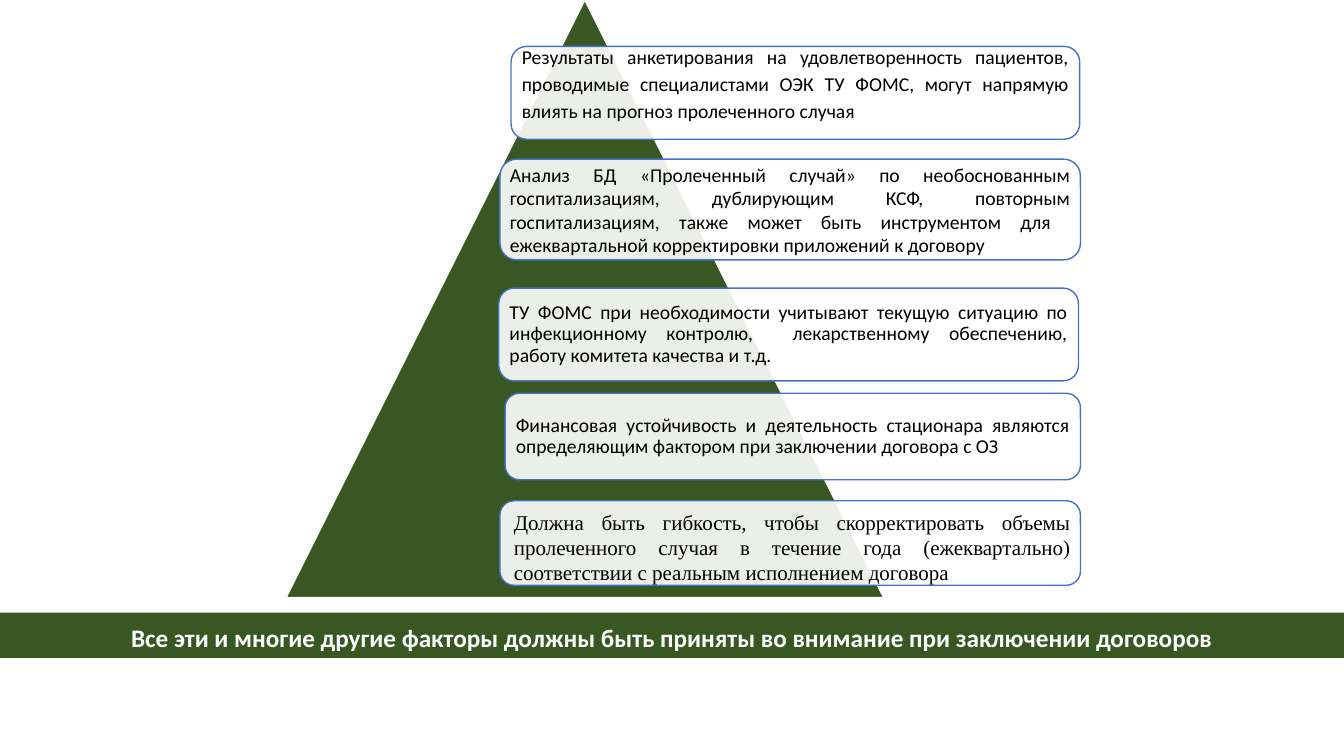
"""Build the slide on factors to weigh when concluding contracts."""
from dataclasses import dataclass
from typing import Optional

import pptx
import pptx.dml.color
import pptx.enum.shapes
import pptx.enum.text
import pptx.oxml
import pptx.oxml.ns
import pptx.util

Cm = pptx.util.Cm
Pt = pptx.util.Pt
Shape = pptx.enum.shapes.MSO_SHAPE
Align = pptx.enum.text.PP_ALIGN
Anchor = pptx.enum.text.MSO_ANCHOR


@dataclass(frozen=True)
class Theme:
    green: str = "385723"
    blue: str = "4472C4"
    white: str = "FFFFFF"
    black: str = "000000"
    sans: str = "Calibri"
    serif: str = "Times New Roman"
    body_size: float = 14
    serif_size: float = 15
    banner_size: float = 18
    outline: float = 1
    card_opacity: int = 90


@dataclass(frozen=True)
class Frame:
    left: float
    top: float
    width: float
    height: float

    def inset(self, gap: float) -> "Frame":
        return Frame(self.left + gap, self.top + gap,
                     self.width - 2 * gap, self.height - 2 * gap)

    def lengths(self) -> tuple:
        return Cm(self.left), Cm(self.top), Cm(self.width), Cm(self.height)


THEME = Theme()


@dataclass(frozen=True)
class Card:
    text: str
    frame: Frame
    text_frame: Optional[Frame] = None
    margins: tuple = (0.15, 0.15, 0.15, 0.15)
    spacing: float = 1.0
    font: str = THEME.sans
    size: float = THEME.body_size


PYRAMID = Frame(7.21, 0, 15.06, 15.06)
BANNER = Frame(0, 15.44, 33.87, 1.14)
BANNER_TEXT = ("Все эти и многие другие факторы должны быть приняты "
               "во внимание при заключении договоров")
CARD_INSET = 0.12

CARDS = (
    Card("Результаты анкетирования на удовлетворенность пациентов, проводимые "
         "специалистами ОЭК ТУ ФОМС, могут напрямую влиять на прогноз "
         "пролеченного случая",
         Frame(12.88, 1.17, 14.33, 2.34),
         margins=(0.15, 0.15, 0.15, 0.68), spacing=1.14),
    Card("Анализ БД «Пролеченный случай» по необоснованным госпитализациям, "
         "дублирующим КСФ, повторным госпитализациям, также может быть "
         "инструментом для  ежеквартальной корректировки приложений к договору",
         Frame(12.6, 4.01, 14.63, 2.54), margins=(0.13, 0.13, 0.13, 0.13)),
    Card("ТУ ФОМС при необходимости учитывают текущую ситуацию по "
         "инфекционному контролю,  лекарственному обеспечению, работу "
         "комитета качества и т.д.",
         Frame(12.57, 7.26, 14.61, 2.34), spacing=0.9),
    Card("Финансовая устойчивость и деятельность стационара являются "
         "определяющим фактором при заключении договора с ОЗ",
         Frame(12.73, 9.91, 14.5, 2.18), spacing=0.9),
    Card("Должна быть гибкость, чтобы скорректировать объемы пролеченного "
         "случая в течение года (ежеквартально) соответствии с реальным "
         "исполнением договора",
         Frame(12.6, 12.62, 14.63, 2.13), Frame(12.7, 12.7, 14.53, 2.18),
         margins=(0.25, 0.13, 0.25, 0.13),
         font=THEME.serif, size=THEME.serif_size),
)


def rgb(value: str) -> pptx.dml.color.RGBColor:
    return pptx.dml.color.RGBColor.from_string(value)


def add_box(page, kind, frame: Frame, fill: str,
            line: Optional[str] = None, opacity: int = 100):
    box = page.shapes.add_shape(kind, *frame.lengths())
    box.shadow.inherit = False
    box.fill.solid()
    box.fill.fore_color.rgb = rgb(fill)
    if opacity < 100:
        color = box.fill._xPr.find(".//" + pptx.oxml.ns.qn("a:srgbClr"))
        alpha = pptx.oxml.parse_xml(
            f'<a:alpha {pptx.oxml.ns.nsdecls("a")} val="{opacity * 1000}"/>')
        color.append(alpha)
    if line:
        box.line.color.rgb = rgb(line)
        box.line.width = Pt(THEME.outline)
    else:
        box.line.fill.background()
    return box


def write(box, text: str, *, font: str = THEME.sans,
          size: float = THEME.body_size, color: str = THEME.black,
          bold: bool = False, align=Align.JUSTIFY, spacing: float = 1.0,
          margins: tuple = (0.25, 0.13, 0.25, 0.13)) -> None:
    body = box.text_frame
    body.word_wrap = True
    body.vertical_anchor = Anchor.MIDDLE
    (body.margin_left, body.margin_top,
     body.margin_right, body.margin_bottom) = map(Cm, margins)
    para = body.paragraphs[0]
    para.alignment = align
    para.line_spacing = spacing
    span = para.add_run()
    span.text = text
    span.font.name = font
    span.font.size = Pt(size)
    span.font.bold = bold
    span.font.color.rgb = rgb(color)


def add_card(page, card: Card) -> None:
    add_box(page, Shape.ROUNDED_RECTANGLE, card.frame, THEME.white,
            THEME.blue, THEME.card_opacity)
    text_frame = card.text_frame or card.frame.inset(CARD_INSET)
    label = page.shapes.add_textbox(*text_frame.lengths())
    write(label, card.text, font=card.font, size=card.size,
          spacing=card.spacing, margins=card.margins)


def main() -> None:
    deck = pptx.Presentation()
    deck.slide_width, deck.slide_height = Cm(33.87), Cm(19.05)
    page = deck.slides.add_slide(deck.slide_layouts[6])
    add_box(page, Shape.ISOSCELES_TRIANGLE, PYRAMID, THEME.green, THEME.white)
    for card in CARDS:
        add_card(page, card)
    banner = add_box(page, Shape.RECTANGLE, BANNER, THEME.green)
    write(banner, BANNER_TEXT, size=THEME.banner_size, color=THEME.white,
          bold=True, align=Align.CENTER, spacing=1.14)
    deck.save("out.pptx")


if __name__ == "__main__":
    main()
